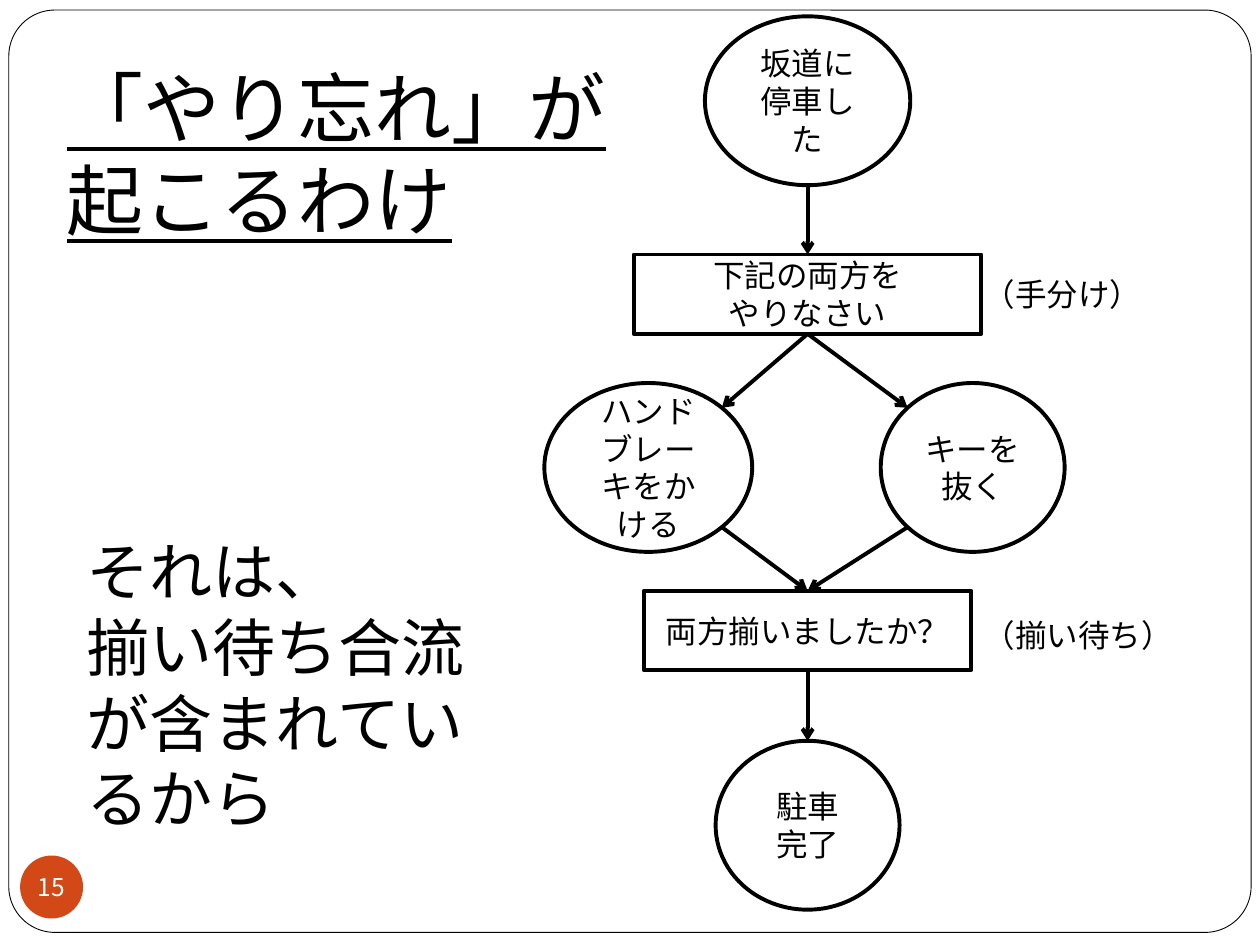
from collections import namedtuple

from lxml import etree
from pptx import Presentation
from pptx.dml.color import RGBColor
from pptx.enum.shapes import MSO_CONNECTOR, MSO_SHAPE
from pptx.enum.text import MSO_ANCHOR, MSO_AUTO_SIZE, PP_ALIGN
from pptx.oxml.ns import qn
from pptx.util import Inches, Pt

OVAL, RECTANGLE, ROUNDED = MSO_SHAPE.OVAL, MSO_SHAPE.RECTANGLE, MSO_SHAPE.ROUNDED_RECTANGLE
STRAIGHT = MSO_CONNECTOR.STRAIGHT
TOP, MIDDLE = MSO_ANCHOR.TOP, MSO_ANCHOR.MIDDLE
LEFT, CENTER = PP_ALIGN.LEFT, PP_ALIGN.CENTER
GROW = MSO_AUTO_SIZE.SHAPE_TO_FIT_TEXT

FONT = "Noto Sans CJK JP"
BLACK, WHITE, ORANGE = "000000", "FFFFFF", "D34817"
COLUMNS, ROWS = 100, 75
CELL = Inches(0.1)
DIAGONAL = 0.5 ** 0.5

Box = namedtuple("Box", "left top width height")


def colour(value):
    return RGBColor.from_string(value)


def grid(*cells):
    return [round(cell * CELL) for cell in cells]


def within(box, left, top, width, height):
    return Box(box.left + left, box.top + top, width, height)


def anchor(box, across, down):
    return (box.left + box.width * (1 + across) / 2,
            box.top + box.height * (1 + down) / 2)


def write(shape, lines, size, align=LEFT, ink=BLACK, underline=None):
    frame = shape.text_frame
    frame.text = "\n".join(lines)
    for para in frame.paragraphs:
        para.alignment = align
        para.space_before = Pt(0)
        para.font.size = Pt(size)
        para.font.underline = underline
        para.font.color.rgb = colour(ink)
        para.font.name = FONT
    for font in shape.element.iter(qn("a:defRPr")):
        etree.SubElement(font, qn("a:ea"), typeface=FONT)


def add_shape(page, kind, box, fill=None, line=None):
    shape = page.shapes.add_shape(kind, *grid(*box))
    shape.shadow.inherit = False
    if fill:
        shape.fill.solid()
        shape.fill.fore_color.rgb = colour(fill)
    else:
        shape.fill.background()
    if line:
        shape.line.color.rgb = colour(BLACK)
        shape.line.width = Pt(line)
    else:
        shape.line.fill.background()
    return shape


def add_node(page, kind, box, lines):
    node = add_shape(page, kind, box, line=2.25)
    node.text_frame.vertical_anchor = MIDDLE
    write(node, lines, 18, CENTER)
    return box


def add_arrow(page, start, end):
    arrow = page.shapes.add_connector(STRAIGHT, *grid(*start, *end))
    arrow.line.color.rgb = colour(BLACK)
    arrow.line.width = Pt(2.25)
    outline = arrow.line._get_or_add_ln()
    etree.SubElement(outline, qn("a:tailEnd"), type="arrow")
    etree.SubElement(arrow.element.spPr, qn("a:effectLst"))


def add_note(page, box, text):
    note = page.shapes.add_textbox(*grid(*box))
    note.text_frame.word_wrap = False
    note.text_frame.auto_size = GROW
    write(note, [text], 18)


def place_text(placeholder, box, lines, size, underline=None):
    placeholder.left, placeholder.top, placeholder.width, placeholder.height = grid(*box)
    frame = placeholder.text_frame
    frame.vertical_anchor = TOP
    frame.word_wrap = False
    frame.auto_size = GROW
    write(placeholder, lines, size, underline=underline)
    for para in placeholder.element.iter(qn("a:pPr")):
        para.set("marL", "0")
        para.set("indent", "0")
        spacing = para.find(qn("a:spcBef"))
        spacing.addnext(etree.Element(qn("a:buNone")))


def draw_border(page, box):
    border = add_shape(page, ROUNDED, box, WHITE, 0.5)
    border.adjustments[0] = 0.05
    page.shapes.element.insert(2, border.element)


def draw_flow(page, box):
    axis, oval, step = 20.9, 13.4, 6.3
    rows = {"start": 0, "split": 18.9, "branch": 29.1, "merge": 45.6, "end": 57.5}

    def centred(middle, row, width, height):
        return within(box, middle - width / 2, rows[row], width, height)

    split = add_node(page, RECTANGLE, centred(axis, "split", 27.6, step),
                     ["下記の両方を", "やりなさい"])
    start = add_node(page, OVAL, centred(axis, "start", 16.3, oval), ["坂道に", "停車した"])
    merge = add_node(page, RECTANGLE, centred(axis, "merge", 26, step), ["両方揃いましたか？"])
    brake = add_node(page, OVAL, centred(8.25, "branch", 16.5, oval),
                     ["ハンド", "ブレーキをかける"])
    key = add_node(page, OVAL, centred(34, "branch", 14.6, oval), ["キーを抜く"])
    end = add_node(page, OVAL, centred(axis, "end", 14.6, oval), ["駐車", "完了"])

    add_arrow(page, anchor(start, 0, 1), anchor(split, 0, -1))
    for branch, side in ((brake, DIAGONAL), (key, -DIAGONAL)):
        add_arrow(page, anchor(split, 0, 1), anchor(branch, side, -DIAGONAL))
        add_arrow(page, anchor(branch, side, DIAGONAL), anchor(merge, 0, -1))
    add_arrow(page, anchor(merge, 0, 1), anchor(end, 0, -1))

    add_note(page, within(box, 33.9, rows["split"] + 1.1, 14.6, 4), "（手分け）")
    add_note(page, within(box, 33.9, rows["merge"] + 1.5, 17.2, 4), "（揃い待ち）")


def draw_page_number(page, box, number):
    badge = add_shape(page, OVAL, box, ORANGE)
    frame = badge.text_frame
    frame.margin_left = frame.margin_right = frame.margin_top = frame.margin_bottom = 0
    frame.word_wrap = False
    frame.vertical_anchor = MIDDLE
    write(badge, [number], 14, CENTER, WHITE)


def main():
    deck = Presentation()
    deck.slide_width, deck.slide_height = grid(COLUMNS, ROWS)
    page = deck.slides.add_slide(deck.slide_layouts[1])
    title, body = page.placeholders
    draw_border(page, Box(0.7, 0.8, 98.6, 73.2))
    draw_flow(page, Box(43.2, 1.3, 51.1, 70.9))
    place_text(title, Box(4.3, 4.3, 45.2, 15.8), ["「やり忘れ」が", "起こるわけ"], 44, True)
    place_text(body, Box(5.9, 41.8, 32.3, 25.2),
               ["それは、", "揃い待ち合流", "が含まれてい", "るから"], 36)
    draw_page_number(page, Box(1.6, 67.9, 5, 5), "15")
    deck.save("out.pptx")


if __name__ == "__main__":
    main()
